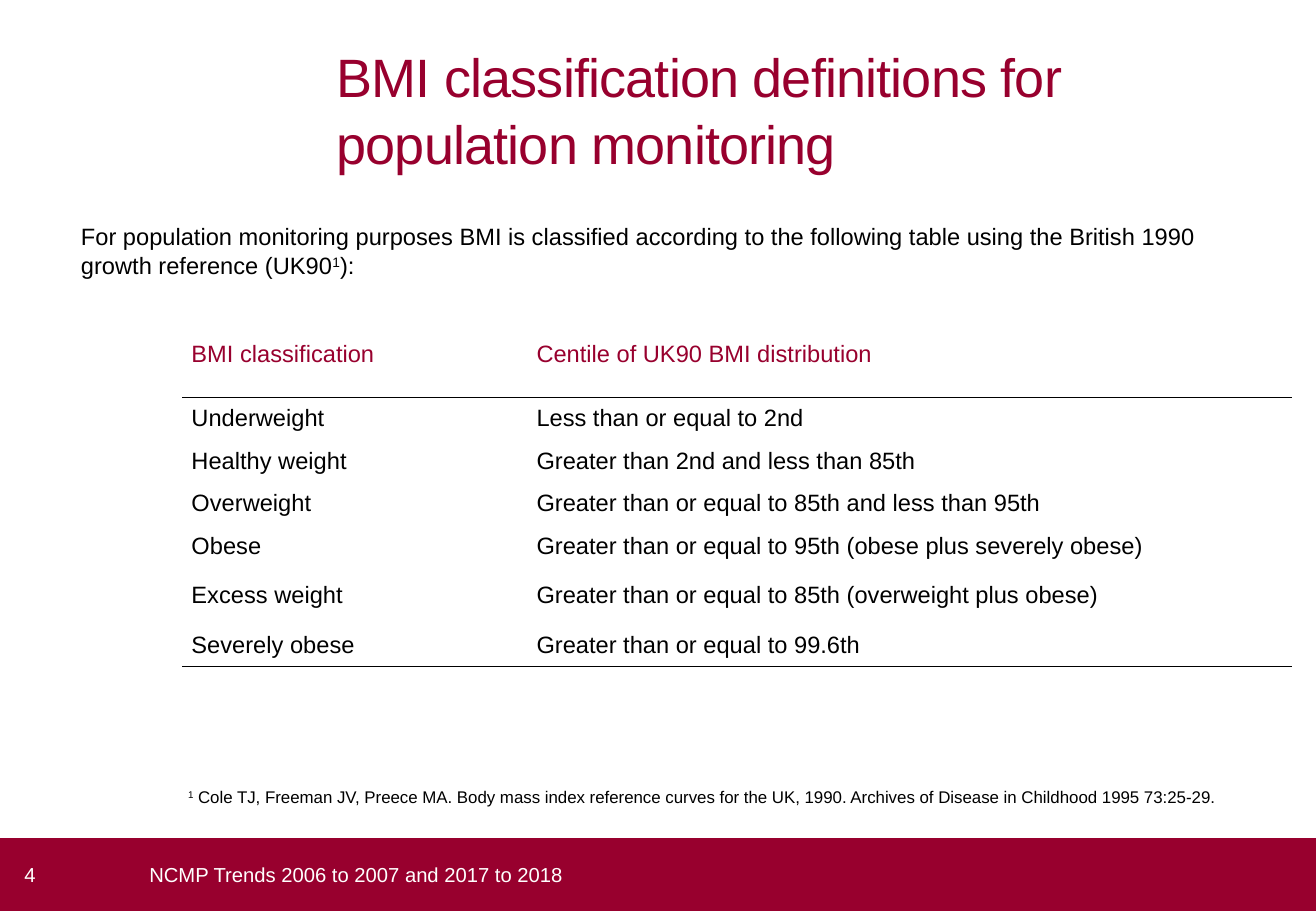
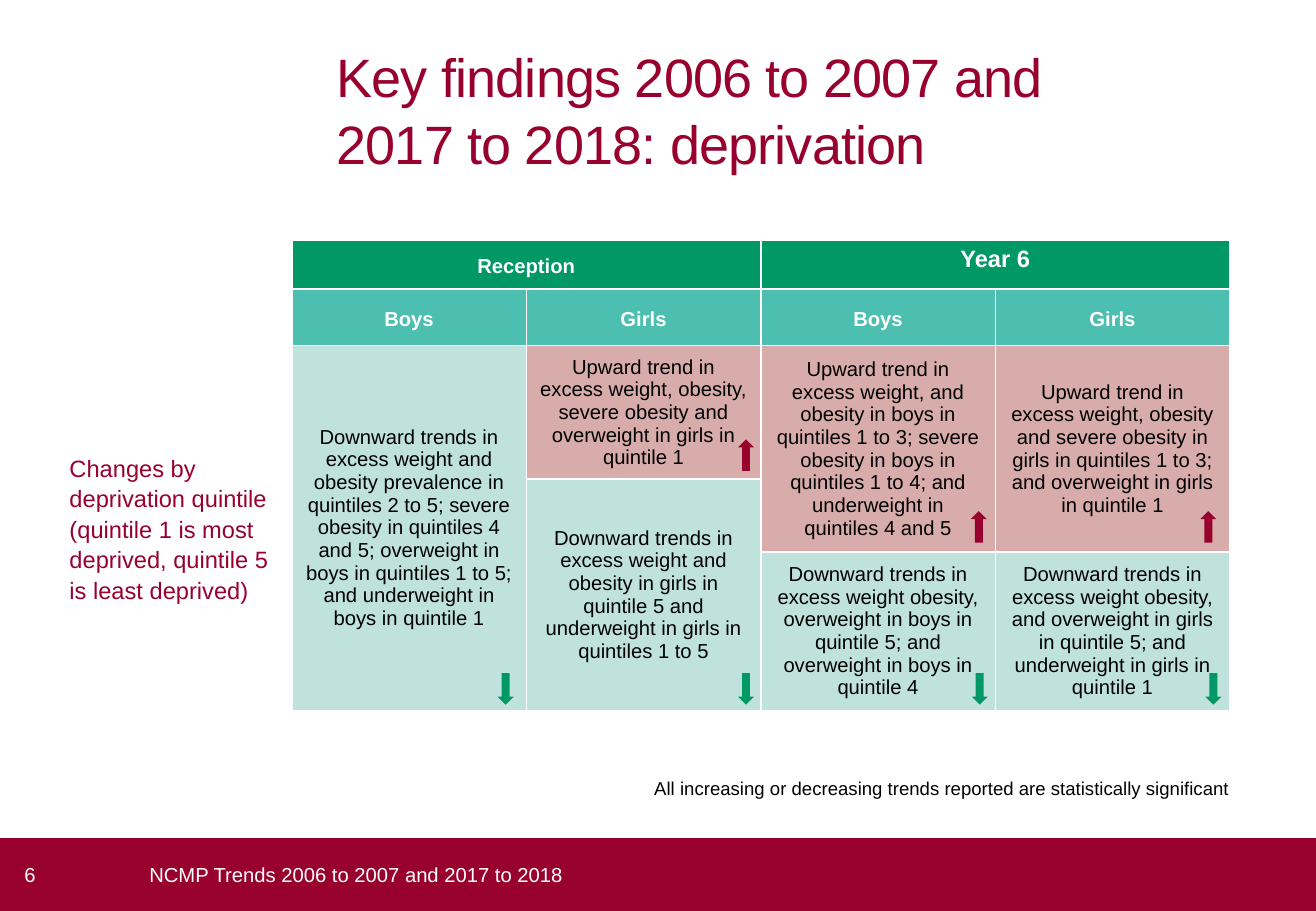
from lxml import etree
from pptx import Presentation
from pptx.dml.color import RGBColor
from pptx.enum.shapes import MSO_SHAPE
from pptx.enum.text import MSO_ANCHOR, MSO_AUTO_SIZE, PP_ALIGN
from pptx.oxml.ns import qn
from pptx.util import Pt

RECT, UP, DOWN = MSO_SHAPE.RECTANGLE, MSO_SHAPE.UP_ARROW, MSO_SHAPE.DOWN_ARROW
TOP, MID = MSO_ANCHOR.TOP, MSO_ANCHOR.MIDDLE
LEFT, MIDDLE, RIGHT = PP_ALIGN.LEFT, PP_ALIGN.CENTER, PP_ALIGN.RIGHT

WINE, GREEN, TEAL = "98002E", "009966", "4CBFB1"
MINT, ROSE, BLACK, WHITE = "BFE2DD", "D8ACAB", "000000", "FFFFFF"
WIDE, HIGH, BAND = 780, 540, 496.8


def paint(fill, color):
    fill.solid()
    fill.fore_color.rgb = RGBColor.from_string(color)


def style(frame, size, color, align=LEFT, bold=False, space=None):
    for para in frame.paragraphs:
        para.alignment = align
        para.line_spacing = space
        for run in para.runs:
            run.font.name = "Arial"
            run.font.size = Pt(size)
            run.font.bold = bold
            paint(run.font.fill, color)


deck = Presentation()
deck.slide_width, deck.slide_height = Pt(WIDE), Pt(HIGH)

# Titles and bottom bands
titles = [
    "BMI classification definitions for population monitoring",
    "Key findings 2006 to 2007 and \v2017 to 2018: deprivation",
]
for text in titles:
    slide = deck.slides.add_slide(deck.slide_layouts[5])
    title = slide.shapes.title
    title.left, title.top, title.width, title.height = Pt(199.5), Pt(19.5), Pt(534), Pt(90)
    frame = title.text_frame
    frame.text = text
    frame.auto_size = MSO_AUTO_SIZE.NONE
    frame.vertical_anchor = MID
    frame.margin_left = frame.margin_right = frame.margin_top = frame.margin_bottom = 0
    style(frame, 32, WINE, space=1.03)
    for run in frame.paragraphs[0].runs:
        run.font._element.set("spc", "-50")

    band = slide.shapes.add_shape(RECT, 0, Pt(BAND), Pt(WIDE), Pt(HIGH - BAND))
    band.shadow.inherit = False
    band.line.fill.background()
    paint(band.fill, WINE)

bmi, trend = deck.slides

# Text boxes: slide, parts (every second one raised), place, size, colour, anchor, align, insets
footer = ["NCMP Trends 2006 to 2007 and 2017 to 2018"]
run_in = (88.5, BAND, 657, 43.2)
corner = (0, BAND, 38, 43.2)
intro = [
    "For population monitoring purposes BMI is classified according to the following "
    "table using the British 1990 growth reference (UK90", "1", "):",
]
cite = [
    "", "1", " Cole TJ, Freeman JV, Preece MA. Body mass index reference curves for the UK, "
    "1990. Archives of Disease in Childhood 1995 73:25-29.",
]
note = ["All increasing or decreasing trends reported are statistically significant"]
boxes = [
    (bmi, footer, run_in, 12, WHITE, MID, LEFT, (0, 0)),
    (bmi, ["4"], corner, 12, WHITE, MID, LEFT, (14.4, 0)),
    (bmi, intro, (48, 131, 687.5, 40), 14, BLACK, TOP, LEFT, (0, 0)),
    (bmi, cite, (104.4, 463, 670, 19.5), 10, BLACK, TOP, LEFT, (7.2, 3.6)),
    (trend, footer, run_in, 12, WHITE, MID, LEFT, (0, 0)),
    (trend, ["6"], corner, 12, WHITE, MID, LEFT, (14.4, 0)),
    (trend, note, (139, 457, 597, 21), 11, BLACK, TOP, RIGHT, (7.2, 3.6)),
]
for slide, parts, place, size, color, anchor, align, (side, edge) in boxes:
    frame = slide.shapes.add_textbox(*map(Pt, place)).text_frame
    frame.word_wrap = True
    frame.vertical_anchor = anchor
    frame.margin_left = frame.margin_right = Pt(side)
    frame.margin_top = frame.margin_bottom = Pt(edge)
    for i, part in enumerate(parts):
        if part:
            run = frame.paragraphs[0].add_run()
            run.text = part
            if i % 2:
                run.font._element.set("baseline", "30000")
    style(frame, size, color, align, space=1.03 if parts is intro else None)

# BMI table
rows = [
    ("BMI classification", "Centile of UK90 BMI distribution"),
    ("Underweight", "Less than or equal to 2nd"),
    ("Healthy weight", "Greater than 2nd and less than 85th"),
    ("Overweight", "Greater than or equal to 85th and less than 95th"),
    ("Obese", "Greater than or equal to 95th (obese plus severely obese)"),
    ("Excess weight", "Greater than or equal to 85th (overweight plus obese)"),
    ("Severely obese", "Greater than or equal to 99.6th"),
]
table = bmi.shapes.add_table(7, 2, Pt(108.5), Pt(202), Pt(657), Pt(193)).table
table.first_row = table.horz_banding = False
for col, width in zip(table.columns, (204.5, 452.5)):
    col.width = Pt(width)
rules = {0: ["a:lnB"], 1: ["a:lnT"], 6: ["a:lnB"]}
for r, texts in enumerate(rows):
    table.rows[r].height = Pt(33.5 if r in (0, 5) else 25.2)
    for c, text in enumerate(texts):
        cell = table.cell(r, c)
        cell.text = text
        cell.fill.background()
        cell.vertical_anchor = MID if r else TOP
        cell.margin_left = cell.margin_right = Pt(5)
        cell.margin_top = cell.margin_bottom = 0
        style(cell.text_frame, 14, BLACK if r else WINE, space=Pt(16))
        for tag in rules.get(r, []):
            line = etree.Element(qn(tag), w="12700")
            fill = etree.SubElement(line, qn("a:solidFill"))
            etree.SubElement(fill, qn("a:srgbClr"), val=BLACK)
            cell._tc.get_or_add_tcPr().insert(0, line)

# Deprivation table
table = trend.shapes.add_table(5, 5, Pt(34), Pt(142.5), Pt(695), Pt(278.5)).table
table.horz_banding = False
for col in table.columns:
    col.width = Pt(139)
for row, height in zip(table.rows, (28.8, 33.5, 79.2, 43.2, 93.8)):
    row.height = Pt(height)
for cell in table.iter_cells():
    cell.fill.background()

# Cells: row, column, rows down, columns across, fill, text
cells = [
    (0, 1, 1, 2, GREEN, "Reception"),
    (0, 3, 1, 2, GREEN, "Year 6"),
    (1, 1, 1, 1, TEAL, "Boys"),
    (1, 2, 1, 1, TEAL, "Girls"),
    (1, 3, 1, 1, TEAL, "Boys"),
    (1, 4, 1, 1, TEAL, "Girls"),
    (2, 0, 3, 1, None, "Changes by deprivation quintile (quintile 1 is most deprived, "
     "quintile 5 is least deprived)"),
    (2, 1, 3, 1, MINT, "Downward trends in excess weight and obesity prevalence in quintiles "
     "2 to 5; severe obesity in quintiles 4 and 5; overweight in boys in quintiles 1 to 5; "
     "and underweight in boys in quintile 1"),
    (2, 2, 1, 1, ROSE, "Upward trend in excess weight, obesity, severe obesity and overweight "
     "in girls in quintile 1"),
    (2, 3, 2, 1, ROSE, "Upward trend in excess weight, and obesity in boys in quintiles 1 to 3; "
     "severe obesity in boys in quintiles 1 to 4; and underweight in quintiles 4 and 5"),
    (2, 4, 2, 1, ROSE, "Upward trend in excess weight, obesity and severe obesity in girls in "
     "quintiles 1 to 3; and overweight in girls in quintile 1"),
    (3, 2, 2, 1, MINT, "Downward trends in excess weight and obesity in girls in quintile 5 "
     "and underweight in girls in quintiles 1 to 5"),
    (4, 3, 1, 1, MINT, "Downward trends in excess weight obesity, overweight in boys in "
     "quintile 5; and overweight in boys in quintile 4"),
    (4, 4, 1, 1, MINT, "Downward trends in excess weight obesity, and overweight in girls in "
     "quintile 5; and underweight in girls in quintile 1"),
]
for r, c, down, across, fill, text in cells:
    cell = table.cell(r, c)
    if down * across > 1:
        cell.merge(table.cell(r + down - 1, c + across - 1))
    cell.text = text
    cell.vertical_anchor = TOP if text == "Year 6" else MID
    if fill:
        paint(cell.fill, fill)
    color = WHITE if r < 2 else BLACK if fill else WINE
    size = 14 if text == "Year 6" or not fill else 12
    space = 1.15 if not fill or (r < 2 and size == 12) else None
    style(cell.text_frame, size, color, MIDDLE if fill else LEFT, r < 2, space)

# Trend arrows
arrows = [(DOWN, GREEN, x, 399) for x in (295, 437.5, 576, 714.5)]
arrows += [(UP, WINE, x, y) for x, y in ((437.5, 260.5), (575.5, 303), (711.5, 303))]
for kind, color, x, y in arrows:
    arrow = trend.shapes.add_shape(kind, Pt(x), Pt(y), Pt(9.4), Pt(18.7))
    arrow.shadow.inherit = False
    arrow.line.fill.background()
    paint(arrow.fill, color)

deck.save("out.pptx")
